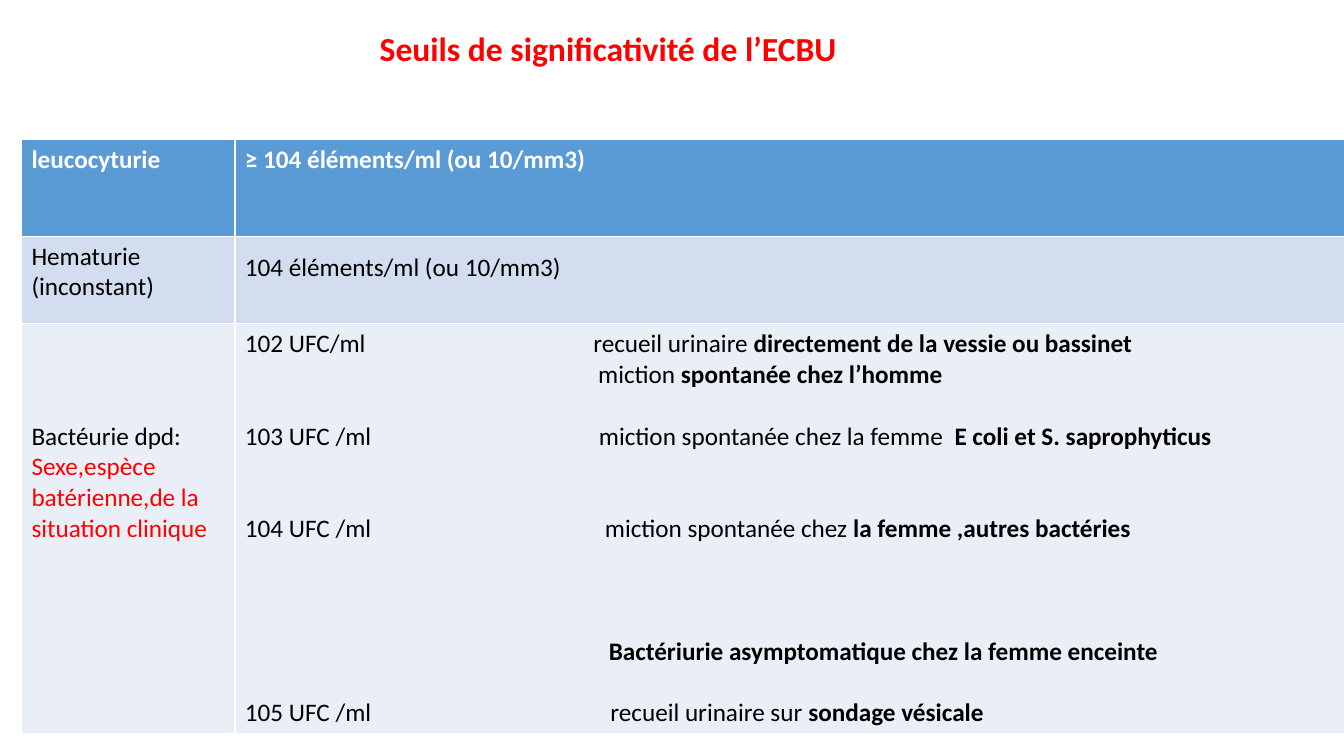
from lxml import etree
from pptx import Presentation
from pptx.dml.color import RGBColor
from pptx.enum.text import MSO_AUTO_SIZE
from pptx.oxml.ns import qn
from pptx.util import Cm, Pt

GROW = MSO_AUTO_SIZE.SHAPE_TO_FIT_TEXT
RED, BLACK, WHITE = "FF0000", "000000", "FFFFFF"
BLUE, MID, PALE = "5B9BD5", "D2DEEF", "EAEFF7"
LINE = 21.97
COLS = (5.38, 27.97)
ROWS = ((2.44, BLUE), (2.21, MID), (10.33, PALE))
LIMITS = (
    (0, 8.78, "102 UFC/ml", "recueil urinaire ", "directement de la vessie ou bassinet"),
    (0, 8.9, "", "miction ", "spontanée chez l’homme"),
    (1, 8.92, "103 UFC /ml", "miction spontanée chez la femme  ", "E coli et S. saprophyticus"),
    (2, 9.07, "104 UFC /ml", "miction spontanée chez ", "la femme ,autres bactéries"),
    (3, 9.17, "", "", "Bactériurie asymptomatique chez la femme enceinte"),
    (1, 9.21, "105 UFC /ml", "recueil urinaire sur ", "sondage vésicale"),
)


def tint(code):
    """Return the colour for a hex string."""
    return RGBColor.from_string(code)


def write(para, text, size=18, color=BLACK, bold=False):
    """Add a formatted run to a paragraph."""
    run = para.add_run()
    run.text = text
    font = run.font
    font.name, font.size, font.bold = "Calibri", Pt(size), bold
    font.color.rgb = tint(color)


def set_tab(para, pos):
    """Give a paragraph one left tab stop at a position in cm."""
    stops = etree.SubElement(para._p.get_or_add_pPr(), qn("a:tabLst"))
    etree.SubElement(stops, qn("a:tab"), pos=str(Cm(pos)), algn="l")


def add_title(slide, left, top, width, height):
    """Place the slide title in the given box."""
    box = slide.shapes.add_textbox(Cm(left), Cm(top), Cm(width), Cm(height))
    frame = box.text_frame
    frame.word_wrap = True
    frame.auto_size = GROW
    frame.margin_left = Cm(1.75)
    write(frame.paragraphs[0], "Seuils de significativité de l’ECBU", size=24, color=RED, bold=True)


def fill_limits(frame):
    """Write the bacterial thresholds, one paragraph each."""
    for i, (gap, pos, count, case, strong) in enumerate(LIMITS):
        para = frame.add_paragraph() if i else frame.paragraphs[0]
        para.space_before = Pt(gap * LINE)
        set_tab(para, pos)
        write(para, f"{count}\t{case}")
        write(para, strong, bold=True)


def add_grid(slide, left, top):
    """Place the threshold table with its corner at the given point."""
    height = sum(tall for tall, _ in ROWS)
    shape = slide.shapes.add_table(
        len(ROWS), len(COLS), Cm(left), Cm(top), Cm(sum(COLS)), Cm(height))
    grid = shape.table
    for col, wide in zip(grid.columns, COLS):
        col.width = Cm(wide)
    for row, (tall, shade) in zip(grid.rows, ROWS):
        row.height = Cm(tall)
        for cell in row.cells:
            cell.fill.solid()
            cell.fill.fore_color.rgb = tint(shade)

    heads = ("leucocyturie", "≥ 104 éléments/ml (ou 10/mm3)")
    for cell, text in zip(grid.rows[0].cells, heads):
        write(cell.text_frame.paragraphs[0], text, color=WHITE, bold=True)

    blood = grid.cell(1, 0).text_frame
    write(blood.paragraphs[0], "Hematurie")
    write(blood.add_paragraph(), "(inconstant)")

    count = grid.cell(1, 1)
    count.margin_top, count.margin_bottom = Pt(16.8), 0
    para = count.text_frame.paragraphs[0]
    para.line_spacing = Pt(16.8)
    write(para, "104 éléments/ml (ou 10/mm3)")

    germ = grid.cell(2, 0)
    germ.margin_top = Cm(2.45)
    write(germ.text_frame.paragraphs[0], "Bactéurie dpd:")
    write(germ.text_frame.add_paragraph(),
          "Sexe,espèce batérienne,de la situation clinique", color=RED)
    fill_limits(grid.cell(2, 1).text_frame)


def main():
    """Build the slide and save it."""
    deck = Presentation()
    deck.slide_width, deck.slide_height = Cm(33.87), Cm(19.05)
    slide = deck.slides.add_slide(deck.slide_layouts[6])
    add_grid(slide, 0.54, 3.51)
    add_title(slide, 7.82, 0.58, 16.48, 1.27)
    deck.save("out.pptx")


if __name__ == "__main__":
    main()
